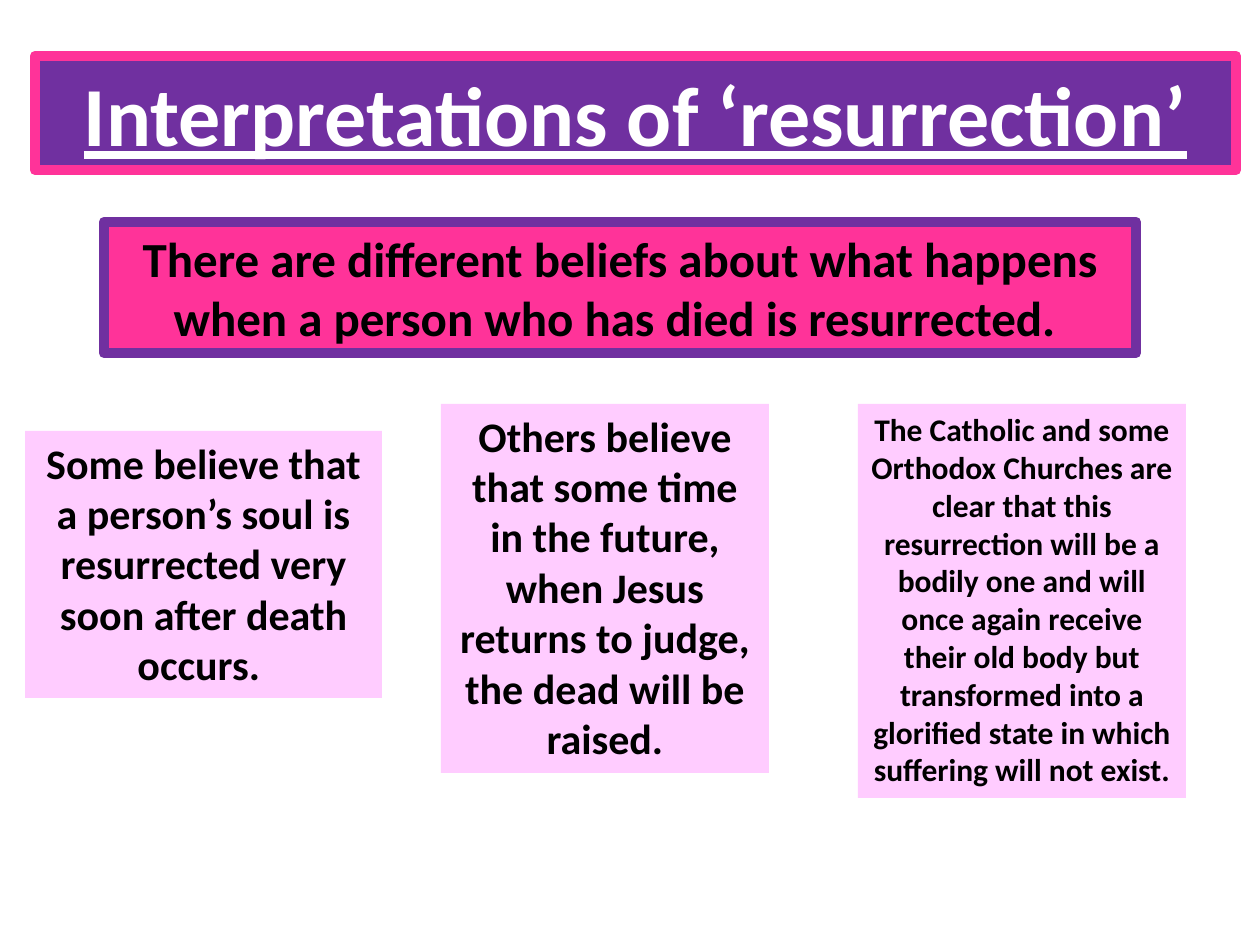
from pptx import Presentation
from pptx.dml.color import RGBColor
from pptx.enum.text import MSO_AUTO_SIZE, PP_ALIGN
from pptx.util import Emu, Pt

PX = 914400 // 126
PURPLE, PINK, PALE = "7030A0", "FF3399", "FFCCFF"
BLACK, WHITE = "000000", "FFFFFF"

BANNERS = [
    ("Interpretations of ‘resurrection’", (35, 56, 1201, 114), 48, PURPLE, PINK, WHITE, True),
    ("There are different beliefs about what happens when a person who has died is resurrected. ",
     (104, 222, 1032, 131), 28, PINK, PURPLE, BLACK, False),
]
BELIEFS = [
    ("Some believe that a person’s soul is resurrected very soon after death occurs. ",
     (25, 431, 357, 267), 24),
    ("Others believe that some time in the future, when Jesus returns to judge, "
     "the dead will be raised.", (441, 404, 328, 369), 24),
    ("The Catholic and some Orthodox Churches are clear that this resurrection will be "
     "a bodily one and will once again receive their old body but transformed into a "
     "glorified state in which suffering will not exist.", (858, 404, 328, 394), 18),
]


def color(value):
    return RGBColor.from_string(value)


def add_box(page, text, place, size, fill, border=None, ink=BLACK, underline=False):
    box = page.shapes.add_textbox(*(Emu(length * PX) for length in place))
    box.fill.solid()
    box.fill.fore_color.rgb = color(fill)
    if border:
        box.line.color.rgb = color(border)
        box.line.width = Pt(6)
    frame = box.text_frame
    frame.word_wrap = True
    frame.auto_size = MSO_AUTO_SIZE.SHAPE_TO_FIT_TEXT
    frame.text = text
    para = frame.paragraphs[0]
    para.alignment = PP_ALIGN.CENTER
    font = para.runs[0].font
    font.name = "Calibri"
    font.size = Pt(size)
    font.bold = True
    font.color.rgb = color(ink)
    if underline:
        font.underline = True


def main():
    deck = Presentation()
    deck.slide_width = Emu(1260 * PX)
    deck.slide_height = Emu(945 * PX)
    page = deck.slides.add_slide(deck.slide_layouts[6])
    for banner in BANNERS:
        add_box(page, *banner)
    for text, place, size in BELIEFS:
        add_box(page, text, place, size, PALE)
    deck.save("out.pptx")


if __name__ == "__main__":
    main()
